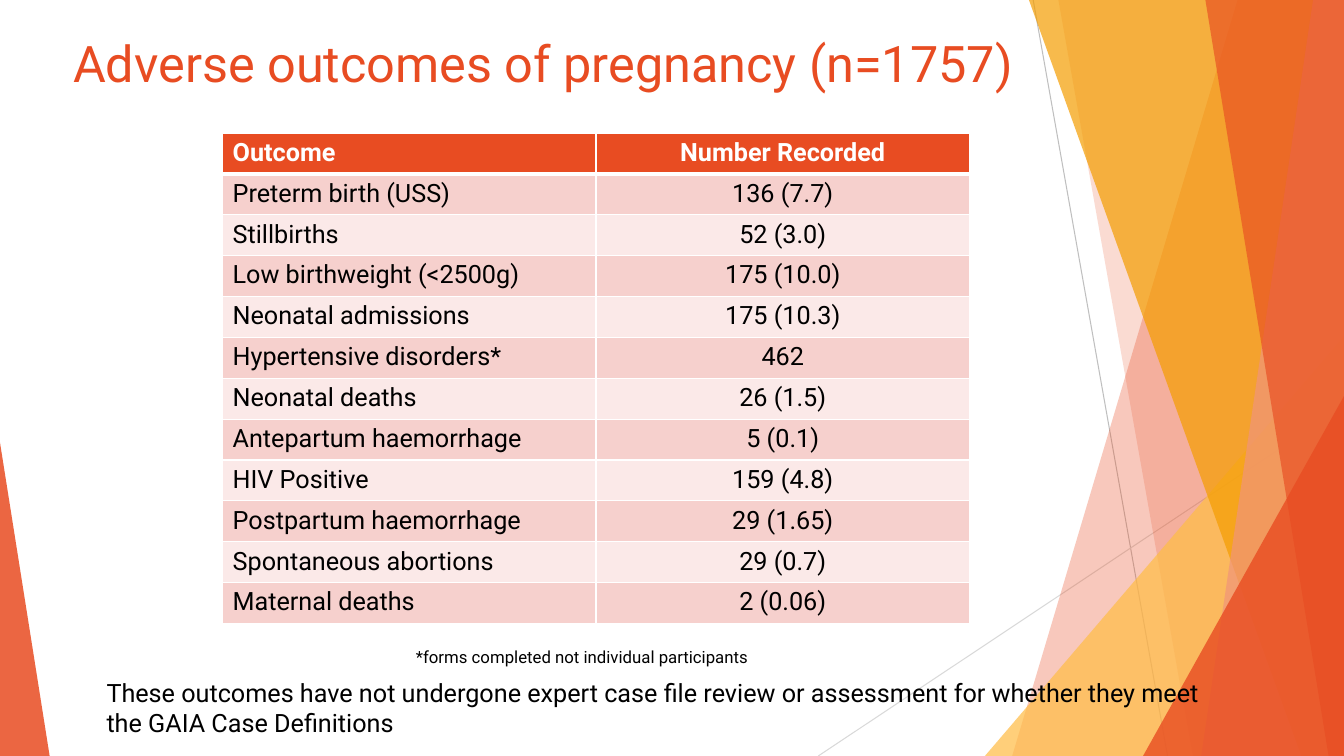
from dataclasses import dataclass
from typing import Any

from lxml.etree import SubElement
from pptx import Presentation
from pptx.dml.color import RGBColor
from pptx.enum.shapes import MSO_CONNECTOR, MSO_SHAPE
from pptx.enum.text import MSO_ANCHOR, MSO_AUTO_SIZE, PP_ALIGN
from pptx.oxml.ns import qn
from pptx.util import Pt

WIDTH, HEIGHT = 960, 540
ORANGE, WHITE, BLACK = "E84C22", "FFFFFF", "000000"
BANDS = ("F6D0CD", "FBE9E8")


@dataclass
class Ray:
    start: tuple[float, float]
    end: tuple[float, float]
    color: str


@dataclass
class Shard:
    top_left: float
    bottom_left: float
    color: str
    opacity: int


@dataclass
class Wedge:
    left: float
    top: float
    width: float
    apex: float
    color: str
    opacity: int


@dataclass
class Note:
    left: float
    top: float
    width: float
    height: float
    size: float
    lines: tuple[str, ...]


RAYS = (
    Ray((738, 0), (834, 540), "BFBFBF"),
    Ray((960, 290), (584.5, 540), "D9D9D9"),
)
FACETS = (
    Shard(884, 723, ORANGE, 30),
    Shard(756, 852, ORANGE, 20),
    Wedge(703.5, 240, 256.5, 1, "FFBD47", 72),
    Shard(735, 929.5, "F49D00", 70),
    Shard(938, 858, "F1947A", 70),
    Shard(861, 949, ORANGE, 65),
    Wedge(816.5, 283, 143.5, 1, ORANGE, 80),
    Wedge(0, 316, 35.5, 0, ORANGE, 85),
)
OUTCOMES = (
    ("Outcome", "Number Recorded"),
    ("Preterm birth (USS)", "136 (7.7)"),
    ("Stillbirths", "52 (3.0)"),
    ("Low birthweight (<2500g)", "175 (10.0)"),
    ("Neonatal admissions", "175 (10.3)"),
    ("Hypertensive disorders*", "462"),
    ("Neonatal deaths", "26 (1.5)"),
    ("Antepartum haemorrhage", "5 (0.1)"),
    ("HIV Positive", "159 (4.8)"),
    ("Postpartum haemorrhage", "29 (1.65)"),
    ("Spontaneous abortions", "29 (0.7)"),
    ("Maternal deaths", "2 (0.06)"),
)
NOTES = (
    Note(290, 458.5, 257, 21.5, 12, ("*forms completed not individual participants",)),
    Note(69, 480, 821.5, 51, 18, (
        "These outcomes have not undergone expert case file review or assessment for whether they meet",
        "the GAIA Case Definitions",
    )),
)


def rgb(color: str) -> RGBColor:
    return RGBColor.from_string(color)


def apply_format(target: Any, values: dict[str, Any]) -> None:
    for attribute, value in values.items():
        setattr(target, attribute, value)


def write(paragraph: Any, text: str, size: float, color: str,
          align: PP_ALIGN = PP_ALIGN.LEFT, bold: bool = False) -> None:
    run = paragraph.add_run()
    run.text = text
    paragraph.alignment = align
    apply_format(run.font, {"name": "Roboto", "size": Pt(size), "bold": bold})
    run.font.color.rgb = rgb(color)


def draw_ray(slide: Any, ray: Ray) -> None:
    line = slide.shapes.add_connector(
        MSO_CONNECTOR.STRAIGHT, *map(Pt, ray.start + ray.end))
    line.line.color.rgb = rgb(ray.color)
    line.line.width = Pt(0.75)
    SubElement(line._element.spPr, qn("a:effectLst"))


def draw_facet(slide: Any, facet: Shard | Wedge) -> None:
    if isinstance(facet, Shard):
        builder = slide.shapes.build_freeform(Pt(facet.top_left), 0)
        corners = ((WIDTH, 0), (WIDTH, HEIGHT), (facet.bottom_left, HEIGHT))
        builder.add_line_segments([(Pt(x), Pt(y)) for x, y in corners])
        shape = builder.convert_to_shape()
    else:
        shape = slide.shapes.add_shape(
            MSO_SHAPE.ISOSCELES_TRIANGLE, Pt(facet.left), Pt(facet.top),
            Pt(facet.width), Pt(HEIGHT - facet.top))
        shape.adjustments[0] = facet.apex
    shape.shadow.inherit = False
    shape.fill.solid()
    shape.fill.fore_color.rgb = rgb(facet.color)
    shape.line.fill.background()
    tint = shape._element.spPr.find(qn("a:solidFill")).find(qn("a:srgbClr"))
    SubElement(tint, qn("a:alpha"), val=str(facet.opacity * 1000))


def add_borders(cell: Any, row: int) -> None:
    properties = cell._tc.get_or_add_tcPr()
    widths = {"L": 1, "R": 1, "T": 3 if row == 1 else 1, "B": 3 if row == 0 else 1}
    for side, width in widths.items():
        edge = SubElement(properties, qn(f"a:ln{side}"), w=str(Pt(width)))
        SubElement(SubElement(edge, qn("a:solidFill")), qn("a:srgbClr"), val=WHITE)


def draw_outcomes(slide: Any) -> None:
    table = slide.shapes.add_table(
        len(OUTCOMES), 2, Pt(159), Pt(95), Pt(533.5), Pt(29.2 * len(OUTCOMES))).table
    for row, record in enumerate(OUTCOMES):
        table.rows[row].height = Pt(29.2)
        header = row == 0
        for column, text in enumerate(record):
            cell = table.cell(row, column)
            add_borders(cell, row)
            cell.fill.solid()
            cell.fill.fore_color.rgb = rgb(ORANGE if header else BANDS[(row - 1) % 2])
            write(cell.text_frame.paragraphs[0], text, 18, WHITE if header else BLACK,
                  PP_ALIGN.CENTER if column else PP_ALIGN.LEFT, header)


def draw_note(slide: Any, note: Note) -> None:
    frame = slide.shapes.add_textbox(
        Pt(note.left), Pt(note.top), Pt(note.width), Pt(note.height)).text_frame
    apply_format(frame, {"word_wrap": False, "auto_size": MSO_AUTO_SIZE.SHAPE_TO_FIT_TEXT})
    for index, text in enumerate(note.lines):
        paragraph = frame.add_paragraph() if index else frame.paragraphs[0]
        write(paragraph, text, note.size, BLACK)


def place_title(slide: Any) -> None:
    title = slide.shapes.title
    apply_format(title, {"left": Pt(45), "top": Pt(19), "width": Pt(772.5), "height": Pt(103.5)})
    apply_format(title.text_frame, {
        "word_wrap": True, "auto_size": MSO_AUTO_SIZE.NONE, "vertical_anchor": MSO_ANCHOR.TOP})
    heading = title.text_frame.paragraphs[0]
    heading.line_spacing = 1.0
    write(heading, "Adverse outcomes of pregnancy (n=1757)", 36, ORANGE)
    slide.shapes._spTree.append(title._element)


def main() -> None:
    deck = Presentation()
    apply_format(deck, {"slide_width": Pt(WIDTH), "slide_height": Pt(HEIGHT)})
    slide = deck.slides.add_slide(deck.slide_layouts[5])
    for ray in RAYS:
        draw_ray(slide, ray)
    for facet in FACETS:
        draw_facet(slide, facet)
    place_title(slide)
    draw_outcomes(slide)
    for note in NOTES:
        draw_note(slide, note)
    deck.save("out.pptx")


if __name__ == "__main__":
    main()
